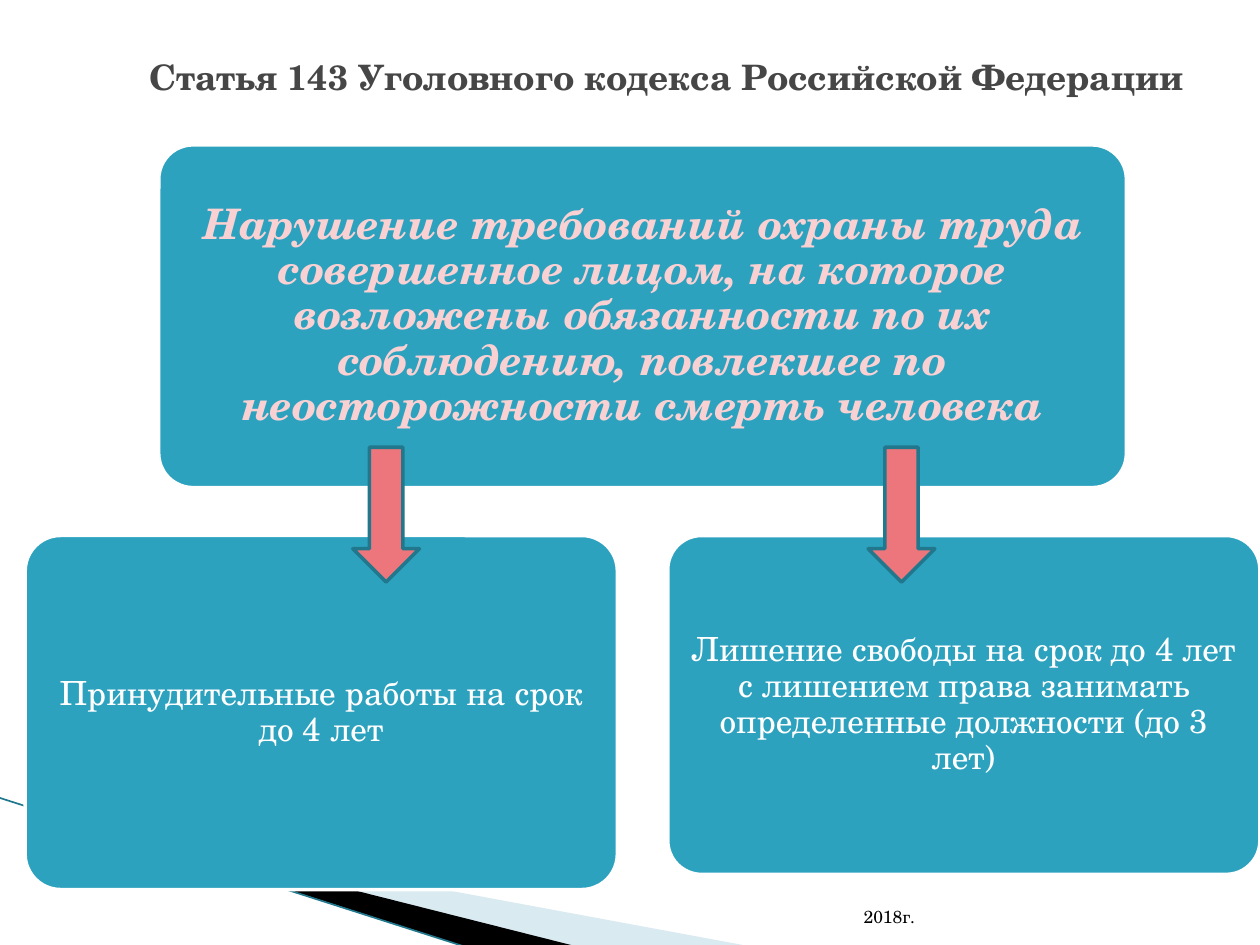
"""Build a slide on Article 143 of the Criminal Code: an offence and its two penalties."""
from lxml import etree
from pptx import Presentation
from pptx import util as u
from pptx.dml.color import RGBColor
from pptx.enum import shapes, text
from pptx.oxml import ns

TEAL = RGBColor(0x2D, 0xA2, 0xBF)
DEEP = RGBColor(0x21, 0x78, 0x8D)
PALE = RGBColor(0xA0, 0xCB, 0xDC)
ROSE = RGBColor(0xEC, 0x76, 0x7C)
PINK = RGBColor(0xF9, 0xD1, 0xD3)
GREY = RGBColor(0x46, 0x46, 0x46)
WHITE = RGBColor(0xFF, 0xFF, 0xFF)
BLACK = RGBColor(0, 0, 0)
FONT = "TeX Gyre Schola"

TITLE = "Статья 143 Уголовного кодекса Российской Федерации"
YEAR = "2018г."
BOXES = [
    ("Нарушение требований охраны труда совершенное лицом, на которое возложены "
     "обязанности по их соблюдению, повлекшее по неосторожности смерть человека",
     (1.26, 1.15, 7.68, 2.72), 0.1, 24, PINK, True),
    ("Принудительные работы на срок до 4 лет",
     (0.2, 4.25, 4.7, 2.81), 0.08, 19, WHITE, False),
    ("Лишение свободы на срок до 4 лет с лишением права занимать определенные "
     "должности (до 3 лет)",
     (5.3, 4.25, 4.7, 2.69), 0.08, 19, WHITE, False),
]
ARROWS = [2.8, 6.89]
WEDGES = [
    ([(0.55, 6.51), (5.95, 7.51), (4.56, 7.51), (0.55, 6.5)], PALE, 40),
    ([(0.53, 6.49), (4.57, 7.51), (3.72, 7.52), (0.54, 6.5)], BLACK, 100),
]
EDGE = [(-0.01, 6.33), (3.71, 7.52)]


def inch(vals):
    return [u.Inches(v) for v in vals]


def write(frame, words, size, tint, align, anchor, bold=False, slant=False):
    frame.word_wrap = True
    frame.vertical_anchor = anchor
    frame.text = words
    para = frame.paragraphs[0]
    para.alignment = align
    font = para.runs[0].font
    font.name, font.size = FONT, u.Pt(size)
    font.bold, font.italic = bold, slant
    font.color.rgb = tint
    return para


def paint(shape, fill, line=None):
    shape.shadow.inherit = False
    shape.fill.solid()
    shape.fill.fore_color.rgb = fill
    if line is None:
        shape.line.fill.background()
    else:
        shape.line.color.rgb = line
        shape.line.width = u.Pt(2)


def add_wedge(slide, points, tint, alpha):
    start, *rest = [inch(p) for p in points]
    form = slide.shapes.build_freeform(*start)
    form.add_line_segments(rest, close=True)
    wedge = form.convert_to_shape()
    paint(wedge, tint)
    if alpha < 100:
        clr = wedge.fill._xPr.find(".//" + ns.qn("a:srgbClr"))
        etree.SubElement(clr, ns.qn("a:alpha")).set("val", str(alpha * 1000))


def add_edge(slide):
    start, end = EDGE
    edge = slide.shapes.add_connector(
        shapes.MSO_CONNECTOR.STRAIGHT, *inch(start + end))
    edge.line.color.rgb = DEEP
    edge.line.width = u.Pt(0.95)
    etree.SubElement(edge._element.spPr, ns.qn("a:effectLst"))


def add_box(slide, words, place, inset, size, tint, strong):
    box = slide.shapes.add_shape(shapes.MSO_SHAPE.ROUNDED_RECTANGLE, *inch(place))
    box.adjustments[0] = 0.1
    paint(box, TEAL, WHITE)
    frame = box.text_frame
    frame.margin_left = frame.margin_right = u.Inches(inset)
    frame.margin_top = frame.margin_bottom = u.Inches(inset)
    para = write(frame, words, size, tint, text.PP_ALIGN.CENTER,
                 text.MSO_ANCHOR.MIDDLE, strong, strong)
    para.line_spacing = 0.9


def main():
    deck = Presentation()
    deck.slide_width, deck.slide_height = inch((10, 7.5))
    slide = deck.slides.add_slide(deck.slide_layouts[5])

    for wedge in WEDGES:
        add_wedge(slide, *wedge)
    add_edge(slide)
    for box in BOXES:
        add_box(slide, *box)

    year = slide.shapes.add_textbox(*inch((4.79, 7.01, 2.57, 0.4)))
    write(year.text_frame, YEAR, 10, BLACK, text.PP_ALIGN.RIGHT,
          text.MSO_ANCHOR.BOTTOM)

    title = slide.shapes.title
    title.left, title.top, title.width, title.height = inch((0.5, 0.3, 9, 0.61))
    write(title.text_frame, TITLE, 20, GREY, text.PP_ALIGN.RIGHT,
          text.MSO_ANCHOR.MIDDLE, bold=True)

    for left in ARROWS:
        arrow = slide.shapes.add_shape(
            shapes.MSO_SHAPE.DOWN_ARROW, *inch((left, 3.55, 0.53, 1.07)))
        paint(arrow, ROSE, DEEP)

    deck.save("out.pptx")


if __name__ == "__main__":
    main()
